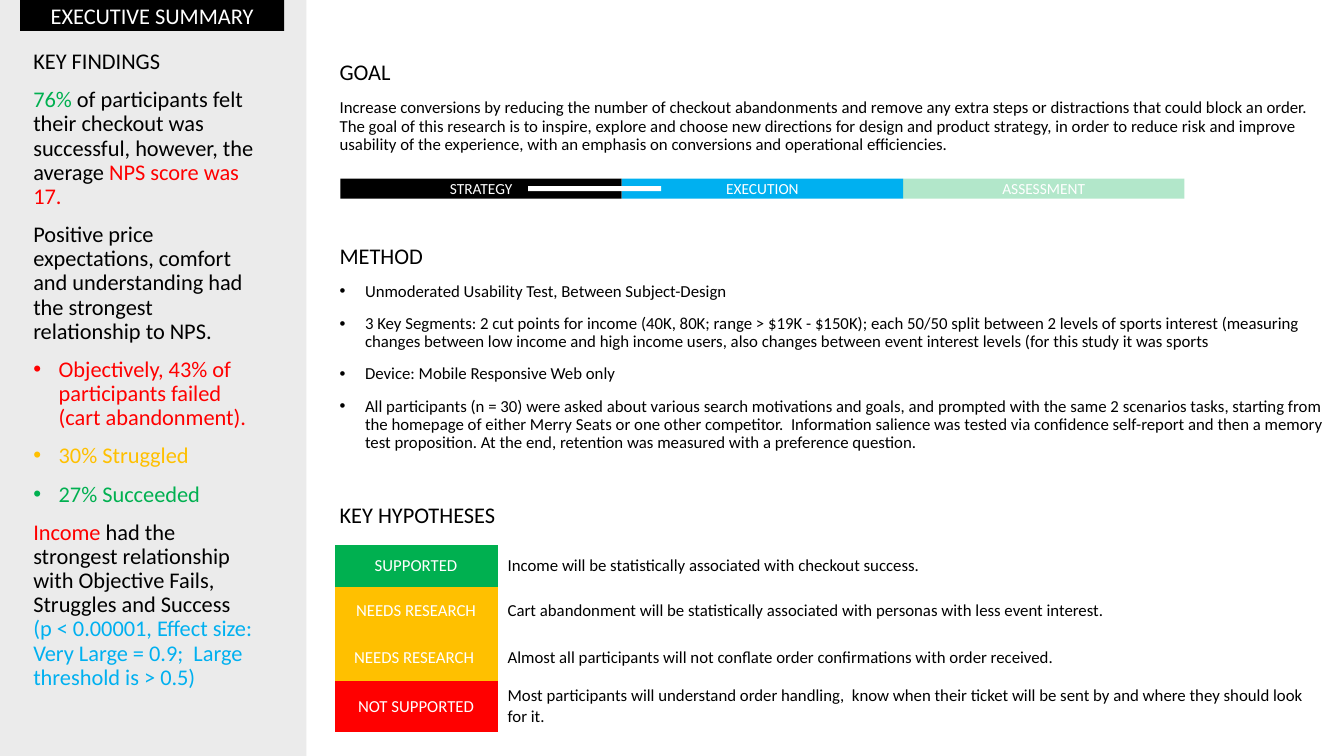
from dataclasses import dataclass

from lxml.etree import SubElement
from pptx import Presentation
from pptx.dml.color import RGBColor
from pptx.enum.shapes import MSO_SHAPE as SHAPE
from pptx.enum.text import MSO_ANCHOR as ANCHOR, PP_ALIGN as ALIGN
from pptx.oxml.ns import qn
from pptx.util import Cm, Pt


@dataclass(frozen=True)
class Theme:
    font: str = "Calibri"
    black: str = "000000"
    white: str = "FFFFFF"
    grey: str = "D9D9D9"
    green: str = "00B050"
    red: str = "FF0000"
    amber: str = "FFC000"
    blue: str = "00B0F0"
    heading: int = 16
    body: int = 12
    phase: int = 11


T = Theme()
PROSE = {"line_spacing": 0.9, "space_before": Pt(10)}
LABEL = {"alignment": ALIGN.CENTER}

prs = Presentation()
prs.slide_width, prs.slide_height = Cm(33.87), Cm(19.05)
s = prs.slides.add_slide(prs.slide_layouts[6])


def add_box(x, y, w, h, color, opacity=100):
    """Add a borderless rectangle, measured in cm, with opacity in percent."""
    sp = s.shapes.add_shape(SHAPE.RECTANGLE, Cm(x), Cm(y), Cm(w), Cm(h))
    sp.shadow.inherit = False
    sp.line.fill.background()
    sp.fill.solid()
    sp.fill.fore_color.rgb = RGBColor.from_string(color)
    if opacity < 100:
        clr = sp.fill._xPr.find(qn("a:solidFill"))[0]
        SubElement(clr, qn("a:alpha")).set("val", str(opacity * 1000))
    return sp


def write(tf, paragraphs, size, formats, anchor=ANCHOR.MIDDLE):
    """Fill a frame; each paragraph is (runs, overrides), each run (text, color)."""
    tf.word_wrap = True
    tf.vertical_anchor = anchor
    for i, (runs, overrides) in enumerate(paragraphs):
        p = tf.add_paragraph() if i else tf.paragraphs[0]
        values = {"alignment": ALIGN.LEFT, **formats, **overrides}
        bullet = values.pop("bullet", False)
        run_size = values.pop("size", size)
        for name, value in values.items():
            setattr(p, name, value)
        if bullet:
            pPr = p._p.get_or_add_pPr()
            pPr.set("marL", str(Cm(0.64)))
            pPr.set("indent", str(-Cm(0.64)))
            SubElement(pPr, qn("a:buFont")).set("typeface", "Arial")
            SubElement(pPr, qn("a:buChar")).set("char", "•")
        for text, color in runs:
            r = p.add_run()
            r.text = text
            r.font.name, r.font.size = T.font, Pt(run_size)
            r.font.color.rgb = RGBColor.from_string(color)


# Key findings sidebar
BULLET = {"bullet": True}
findings = [
    ([("KEY FINDINGS", T.black)], {}),
    ([("76% ", T.green),
      ("of participants felt their checkout was successful, however, the average ", T.black),
      ("NPS score was 17.", T.red)], {}),
    ([("Positive price expectations, comfort and understanding had the strongest "
       "relationship to NPS.", T.black)], {}),
    ([("Objectively, 43% of participants failed (cart abandonment).", T.red)], BULLET),
    ([("30% Struggled", T.amber)], BULLET),
    ([("27% Succeeded", T.green)], BULLET),
    ([("Income", T.red),
      (" had the strongest relationship with Objective Fails, Struggles and Success ", T.black),
      ("(p < 0.00001, Effect size: Very Large = 0.9;  Large threshold is > 0.5)", T.blue)], {}),
]
add_box(0, 0, 7.72, 19.05, T.grey, 51)
sidebar = s.shapes.add_textbox(Cm(0.59), Cm(1.14), Cm(6.05), Cm(17.3))
write(sidebar.text_frame, findings, T.heading, PROSE, ANCHOR.TOP)
title = add_box(0.51, 0, 6.65, 0.78, T.black)
write(title.text_frame, [([("EXECUTIVE SUMMARY", T.white)], {})], T.heading, LABEL)

# Goal, method and hypotheses heading
HEADING = {"size": T.heading}
sections = [
    ("GOAL", HEADING),
    ("Increase conversions by reducing the number of checkout abandonments and remove any "
     "extra steps or distractions that could block an order. The goal of this research is to "
     "inspire, explore and choose new directions for design and product strategy, in order to "
     "reduce risk and improve usability of the experience, with an emphasis on conversions and "
     "operational efficiencies.", {}),
    ("METHOD", {**HEADING, "space_before": Pt(65)}),
    ("Unmoderated Usability Test, Between Subject-Design", BULLET),
    ("3 Key Segments: 2 cut points for income (40K, 80K; range > $19K - $150K); each 50/50 "
     "split between 2 levels of sports interest (measuring changes between low income and high "
     "income users, also changes between event interest levels (for this study it was sports",
     BULLET),
    ("Device: Mobile Responsive Web only", BULLET),
    ("All participants (n = 30) were asked about various search motivations and goals, and "
     "prompted with the same 2 scenarios tasks, starting from the homepage of either Merry Seats "
     "or one other competitor.  Information salience was tested via confidence self-report and "
     "then a memory test proposition. At the end, retention was measured with a preference "
     "question.", BULLET),
    ("KEY HYPOTHESES", {**HEADING, "space_before": Pt(37.5)}),
]
main = add_box(8.31, 1.42, 25.37, 16.81, T.white)
write(main.text_frame, [([(text, T.black)], overrides) for text, overrides in sections],
      T.body, PROSE, ANCHOR.TOP)

# Hypotheses table
hypotheses = [
    ("SUPPORTED", T.green, 1.07,
     "Income will be statistically associated with checkout success."),
    ("NEEDS RESEARCH", T.amber, 1.17,
     "Cart abandonment will be statistically associated with personas with less event interest."),
    ("NEEDS RESEARCH ", T.amber, 1.19,
     "Almost all participants will not conflate order confirmations with order received."),
    ("NOT SUPPORTED", T.red, 1.28,
     "Most participants will understand order handling,  know when their ticket will be sent by "
     "and where they should look for it."),
]
NO_STYLE_NO_GRID = "{2D5ABB26-0587-4C30-8999-92F81FD0307C}"
table = s.shapes.add_table(len(hypotheses), 2, Cm(8.43), Cm(13.73), Cm(24.84), Cm(4.71)).table
table.first_row = table.horz_banding = False
table._tbl.tblPr.find(qn("a:tableStyleId")).text = NO_STYLE_NO_GRID
for column, width in zip(table.columns, (4.11, 20.73)):
    column.width = Cm(width)
for i, (verdict, color, height, claim) in enumerate(hypotheses):
    table.rows[i].height = Cm(height)
    verdict_cell, claim_cell = table.cell(i, 0), table.cell(i, 1)
    verdict_cell.fill.solid()
    verdict_cell.fill.fore_color.rgb = RGBColor.from_string(color)
    claim_cell.fill.background()
    for cell, text, ink, formats in ((verdict_cell, verdict, T.white, LABEL),
                                     (claim_cell, claim, T.black, {})):
        write(cell.text_frame, [([(text, ink)], {})], T.body, formats)
        cell.vertical_anchor = ANCHOR.MIDDLE

# Phase strip, with a bar marking the current position
PHASE_W = 7.09
phases = [("STRATEGY", T.black, 100), ("EXECUTION", T.blue, 100), ("ASSESSMENT", T.green, 30)]
for i, (phase, color, opacity) in enumerate(phases):
    sp = add_box(8.58 + i * PHASE_W, 4.5, PHASE_W, 0.51, color, opacity)
    write(sp.text_frame, [([(phase, T.white)], {})], T.phase, LABEL)
add_box(13.31, 4.69, 3.35, 0.13, T.white)

prs.save("out.pptx")
